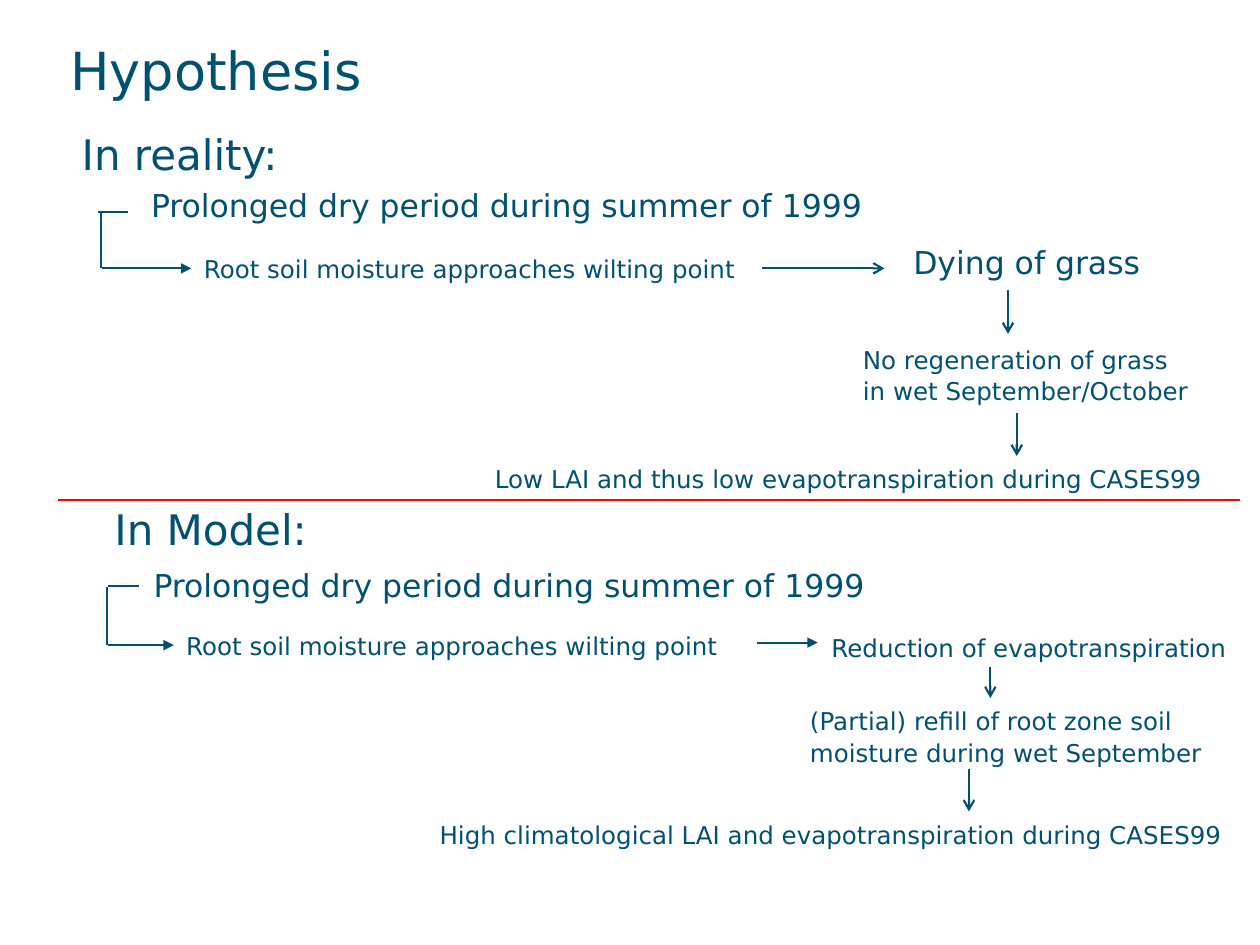
"""Build the hypothesis slide comparing the reality and model cause chains."""
from dataclasses import dataclass
from typing import Optional

import lxml.etree
import pptx
import pptx.dml.color
import pptx.enum.shapes
import pptx.enum.text
import pptx.oxml.ns
import pptx.util

Inches = pptx.util.Inches
Pt = pptx.util.Pt
TOP, LEFT, BOTTOM, RIGHT = range(4)


@dataclass(frozen=True)
class Theme:
    font: str = "DejaVu Sans"
    ink: str = "005172"
    divider: str = "FF0000"
    title: int = 30
    heading: int = 24
    cause: int = 18
    step: int = 14
    line: float = 1.25


THEME = Theme()


@dataclass(frozen=True)
class Label:
    text: str
    left: float
    top: float
    width: float
    height: float
    size: int = THEME.step
    wrap: bool = False


@dataclass(frozen=True)
class Line:
    x1: float
    y1: float
    x2: float
    y2: float
    head: Optional[str] = None
    color: str = THEME.ink
    start: Optional[str] = None
    end: Optional[str] = None


DRY = "Prolonged dry period during summer of 1999"
ROOT = "Root soil moisture approaches wilting point"

LABELS = {
    "reality": Label("In reality:", 0.55, 1.12, 1.89, 0.36, THEME.heading),
    "reality dry": Label(DRY, 1.1, 1.48, 5.95, 0.35, THEME.cause),
    "reality root": Label(ROOT, 1.52, 1.95, 4.53, 0.36),
    "dying": Label("Dying of grass", 7.15, 1.93, 2.03, 0.35, THEME.cause),
    "no regeneration": Label("No regeneration of grass\nin wet September/October",
                             6.75, 2.67, 2.82, 0.61),
    "low LAI": Label("Low LAI and thus low evapotranspiration during CASES99",
                     3.83, 3.62, 6, 0.33, wrap=True),
    "model": Label("In Model:", 0.81, 4.1, 1.82, 0.36, THEME.heading),
    "model dry": Label(DRY, 1.12, 4.49, 5.95, 0.35, THEME.cause),
    "model root": Label(ROOT, 1.38, 4.94, 4.53, 0.36),
    "reduction": Label("Reduction of evapotranspiration", 6.5, 4.96, 3.34, 0.33),
    "refill": Label("(Partial) refill of root zone soil\nmoisture during wet September",
                    6.33, 5.54, 3.32, 0.61),
    "high LAI": Label("High climatological LAI and evapotranspiration during CASES99",
                      3.39, 6.44, 6.61, 0.35, wrap=True),
}

LINES = [
    Line(0.8, 1.68, 0.8, 2.13),
    Line(0.78, 1.68, 1.02, 1.68),
    Line(0.81, 2.13, 1.52, 2.13, "triangle", end="reality root"),
    Line(6.05, 2.13, 7.02, 2.13, "arrow", start="reality root"),
    Line(8, 2.3, 8, 2.65, "arrow"),
    Line(8.07, 3.28, 8.07, 3.62, "arrow"),
    Line(0.86, 4.65, 1.1, 4.65),
    Line(0.85, 4.66, 0.85, 5.12),
    Line(0.86, 5.12, 1.38, 5.12, "triangle", end="model root"),
    Line(6.01, 5.1, 6.49, 5.1, "triangle"),
    Line(7.86, 5.29, 7.86, 5.54, "arrow"),
    Line(7.69, 6.1, 7.69, 6.44, "arrow"),
    Line(0.46, 3.97, 9.84, 3.97, color=THEME.divider),
]


def add_text(slide, text: str, *, left: float, top: float, width: float, height: float,
             size: int, wrap: bool = False, spacing: int = 18,
             insets: tuple = (0.1, 0.05, 0.1, 0.05)):
    """Add a text box with one paragraph per line of text."""
    sp = slide.shapes.add_textbox(Inches(left), Inches(top), Inches(width), Inches(height))
    tf = sp.text_frame
    tf.word_wrap = wrap
    tf.auto_size = pptx.enum.text.MSO_AUTO_SIZE.SHAPE_TO_FIT_TEXT
    tf.margin_left, tf.margin_top, tf.margin_right, tf.margin_bottom = map(Inches, insets)
    for i, content in enumerate(text.split("\n")):
        p = tf.add_paragraph() if i else tf.paragraphs[0]
        p.line_spacing = Pt(spacing)
        r = p.add_run()
        r.text = content
        r.font.name = THEME.font
        r.font.size = Pt(size)
        r.font.color.rgb = pptx.dml.color.RGBColor.from_string(THEME.ink)
    return sp


def add_line(slide, line: Line, boxes: dict) -> None:
    """Add a straight line, with its arrowhead and joins if it has any."""
    cxn = slide.shapes.add_connector(
        pptx.enum.shapes.MSO_CONNECTOR.STRAIGHT,
        Inches(line.x1), Inches(line.y1), Inches(line.x2), Inches(line.y2))
    cxn.line.width = Pt(THEME.line)
    cxn.line.color.rgb = pptx.dml.color.RGBColor.from_string(line.color)
    if line.start:
        cxn.begin_connect(boxes[line.start], RIGHT)
    if line.end:
        cxn.end_connect(boxes[line.end], LEFT)
    qn = pptx.oxml.ns.qn
    if line.head:
        lxml.etree.SubElement(cxn.line._get_or_add_ln(), qn("a:tailEnd"), type=line.head)
    lxml.etree.SubElement(cxn._element.spPr, qn("a:effectLst"))


def main() -> None:
    """Build and save the slide."""
    prs = pptx.Presentation()
    prs.slide_width, prs.slide_height = Inches(10), Inches(7.5)
    s = prs.slides.add_slide(prs.slide_layouts[6])
    add_text(s, "Hypothesis", left=0.54, top=0.25, width=9.23, height=0.87,
             size=THEME.title, wrap=True, spacing=40, insets=(0.02, 0, 0.1, 0.35))
    boxes = {
        name: add_text(s, b.text, left=b.left, top=b.top, width=b.width,
                       height=b.height, size=b.size, wrap=b.wrap)
        for name, b in LABELS.items()
    }
    for line in LINES:
        add_line(s, line, boxes)
    prs.save("out.pptx")


if __name__ == "__main__":
    main()
